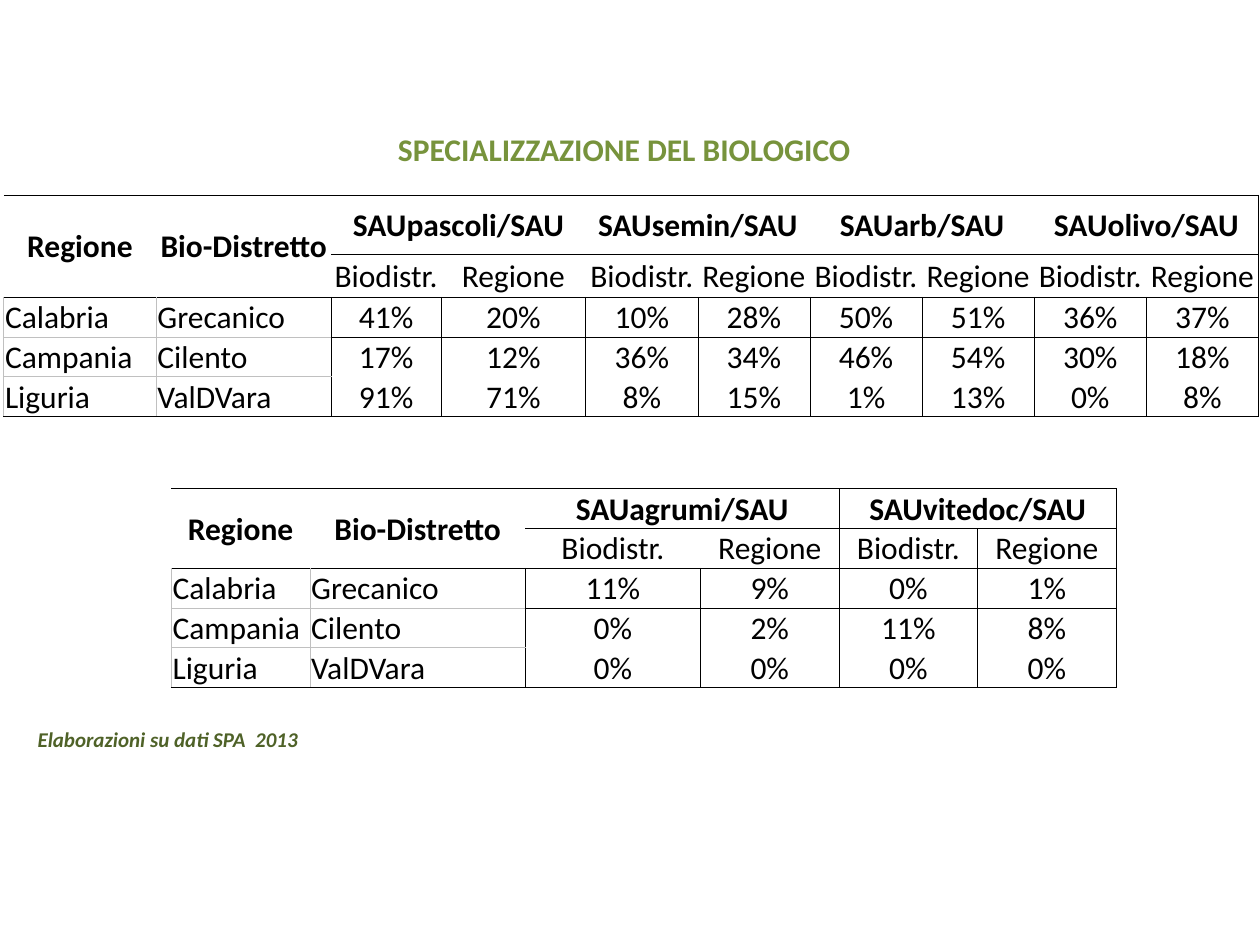
from pptx import Presentation
from pptx.dml.color import RGBColor
from pptx.enum.text import MSO_ANCHOR, MSO_AUTO_SIZE, PP_ALIGN
from pptx.oxml import parse_xml
from pptx.oxml.ns import nsdecls, qn
from pptx.util import Inches, Pt

BLACK, GREY = "000000", "C0C0C0"
NO_STYLE_NO_GRID = "{2D5ABB26-0587-4C30-8999-92F81FD0307C}"
HEADER_ROWS = LABEL_COLUMNS = 2


def color(value):
    return RGBColor.from_string(value)


def write(frame, text, font="Calibri", size=18, fill=BLACK, bold=False,
          italic=False, align=PP_ALIGN.LEFT):
    para = frame.paragraphs[0]
    para.alignment = align
    span = para.add_run()
    span.text = text
    span.font.name = font
    span.font.size = Pt(size)
    span.font.bold = bold
    span.font.italic = italic
    span.font.color.rgb = color(fill)


def cell_edges(row, column, last_row, last_column, divided):
    """Return the colour of each ruled side of a cell, None where unruled."""
    is_label = column < LABEL_COLUMNS
    opens_group = not is_label and column % 2 == 0
    closes_group = not is_label and column % 2 == 1
    if row < HEADER_ROWS:
        in_last_group = column >= last_column - 1
        ends = closes_group or (opens_group and row == 0)
        return {
            "L": BLACK if divided and opens_group and column > LABEL_COLUMNS else None,
            "R": BLACK if ends and (divided or in_last_group) else None,
            "T": BLACK if row == 0 or not is_label else None,
            "B": BLACK,
        }
    inner = GREY if is_label else None
    return {
        "L": BLACK if opens_group else inner,
        "R": BLACK if closes_group or column == 1 else inner,
        "T": BLACK if row == HEADER_ROWS else inner,
        "B": BLACK if row == last_row else inner,
    }


class SlideBuilder:
    def __init__(self, deck):
        self.page = deck.slides.add_slide(deck.slide_layouts[5])

    def title(self, text, left, top, width, height):
        box = self.page.shapes.title
        box.left, box.top = Inches(left), Inches(top)
        box.width, box.height = Inches(width), Inches(height)
        frame = box.text_frame
        frame.word_wrap = True
        frame.auto_size = MSO_AUTO_SIZE.NONE
        frame.vertical_anchor = MSO_ANCHOR.TOP
        write(frame, text, fill="77933C", bold=True, align=PP_ALIGN.CENTER)

    def note(self, text, left, top, width, height):
        box = self.page.shapes.add_textbox(
            Inches(left), Inches(top), Inches(width), Inches(height))
        box.text_frame.word_wrap = True
        write(box.text_frame, text, size=12, fill="4F6228", bold=True, italic=True)

    def share_table(self, left, top, widths, heights, groups, records,
                    divided, subheader_anchor):
        """Add a table with a pair of columns (district, region) per group."""
        frame = self.page.shapes.add_table(
            len(heights), len(widths), Inches(left), Inches(top),
            Inches(sum(widths)), Inches(sum(heights)))
        table = frame.table
        table.first_row = table.horz_banding = False
        table._tbl.tblPr.find(qn("a:tableStyleId")).text = NO_STYLE_NO_GRID
        for column, width in zip(table.columns, widths):
            column.width = Inches(width)
        for row, height in zip(table.rows, heights):
            row.height = Inches(height)

        headings = ["Regione", "Bio-Distretto"]
        for group in groups:
            headings += [group, ""]
        subheadings = ["", ""] + ["Biodistr.", "Regione"] * len(groups)
        for r, values in enumerate([headings, subheadings, *records]):
            for c, text in enumerate(values):
                anchor = (MSO_ANCHOR.MIDDLE, subheader_anchor)[r] \
                    if r < HEADER_ROWS else MSO_ANCHOR.BOTTOM
                centred = r < HEADER_ROWS or c >= LABEL_COLUMNS
                edges = cell_edges(r, c, len(heights) - 1, len(widths) - 1, divided)
                self.fill_cell(table.cell(r, c), text, anchor, edges, bold=r == 0,
                               align=PP_ALIGN.CENTER if centred else PP_ALIGN.LEFT)

        for c in range(LABEL_COLUMNS):
            table.cell(0, c).merge(table.cell(1, c))
        for c in range(LABEL_COLUMNS, len(widths), 2):
            table.cell(0, c).merge(table.cell(0, c + 1))

    def fill_cell(self, cell, text, anchor, edges, **text_format):
        cell.margin_left = cell.margin_right = cell.margin_top = Inches(0.01)
        cell.margin_bottom = 0
        cell.vertical_anchor = anchor
        properties = cell._tc.get_or_add_tcPr()
        for side, line_color in edges.items():
            if line_color:
                properties.append(parse_xml(
                    f'<a:ln{side} {nsdecls("a")} w="{Pt(0.5)}"><a:solidFill>'
                    f'<a:srgbClr val="{line_color}"/></a:solidFill></a:ln{side}>'))
        cell.fill.background()
        if text:
            write(cell.text_frame, text, **text_format)


def main():
    deck = Presentation()
    deck.slide_width, deck.slide_height = Inches(10), Inches(7.5)
    slide = SlideBuilder(deck)
    slide.title("SPECIALIZZAZIONE DEL BIOLOGICO", 0.98, 0.98, 7.95, 0.4)
    slide.share_table(
        0.03, 1.55, [1.21, 1.39, 0.87, 1.15] + [0.89] * 6,
        [0.47, 0.34] + [0.31] * 3,
        ["SAUpascoli/SAU", "SAUsemin/SAU", "SAUarb/SAU", "SAUolivo/SAU"],
        [
            ["Calabria", "Grecanico", "41%", "20%", "10%", "28%", "50%", "51%", "36%", "37%"],
            ["Campania", "Cilento", "17%", "12%", "36%", "34%", "46%", "54%", "30%", "18%"],
            ["Liguria", "ValDVara", "91%", "71%", "8%", "15%", "1%", "13%", "0%", "8%"],
        ],
        divided=False, subheader_anchor=MSO_ANCHOR.MIDDLE)
    slide.share_table(
        1.36, 3.88, [1.1, 1.71, 1.39, 1.1, 1.1, 1.1], [0.31] * 5,
        ["SAUagrumi/SAU", "SAUvitedoc/SAU"],
        [
            ["Calabria", "Grecanico", "11%", "9%", "0%", "1%"],
            ["Campania", "Cilento", "0%", "2%", "11%", "8%"],
            ["Liguria", "ValDVara", "0%", "0%", "0%", "0%"],
        ],
        divided=True, subheader_anchor=MSO_ANCHOR.BOTTOM)
    slide.note("Elaborazioni su dati SPA  2013", 0.2, 5.72, 3.7, 0.3)
    deck.save("out.pptx")


if __name__ == "__main__":
    main()
